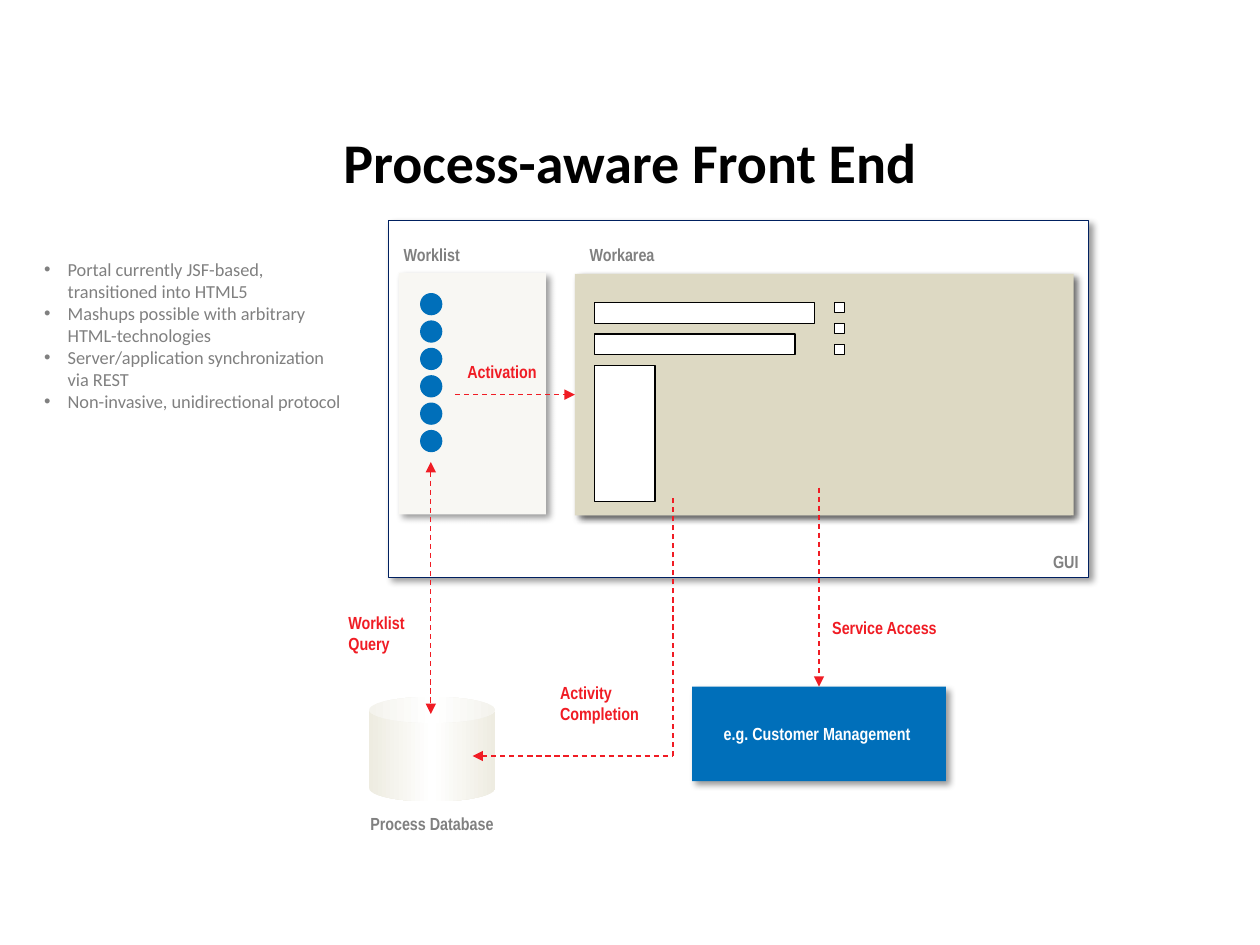
from copy import deepcopy
from typing import NamedTuple, Optional

from lxml import etree
from pptx import Presentation
from pptx.dml.color import RGBColor
from pptx.enum.dml import MSO_LINE
from pptx.enum.shapes import MSO_CONNECTOR, MSO_SHAPE
from pptx.enum.text import MSO_ANCHOR, MSO_AUTO_SIZE, PP_ALIGN
from pptx.oxml.ns import qn
from pptx.util import Pt

RECT, OVAL, CAN = MSO_SHAPE.RECTANGLE, MSO_SHAPE.OVAL, MSO_SHAPE.CAN
STRAIGHT, DASH = MSO_CONNECTOR.STRAIGHT, MSO_LINE.DASH
MIDDLE, TOP = MSO_ANCHOR.MIDDLE, MSO_ANCHOR.TOP
LEFT, CENTER = PP_ALIGN.LEFT, PP_ALIGN.CENTER
FIT, FIXED = MSO_AUTO_SIZE.SHAPE_TO_FIT_TEXT, MSO_AUTO_SIZE.NONE

BLACK = RGBColor(0x00, 0x00, 0x00)
WHITE = RGBColor(0xFF, 0xFF, 0xFF)
GRAY = RGBColor(0x80, 0x80, 0x80)
RED = RGBColor(0xF0, 0x1C, 0x24)
BLUE = RGBColor(0x00, 0x6F, 0xBA)
NAVY = RGBColor(0x00, 0x20, 0x60)
PALE = RGBColor(0xF8, 0xF7, 0xF3)
CREAM = RGBColor(0xFC, 0xFB, 0xF9)
SAND = RGBColor(0xDD, 0xD9, 0xC3)
STONE = RGBColor(0xEE, 0xEC, 0xE1)

BODY, NARROW = "Calibri", "Arial Narrow"


class Box(NamedTuple):
    x: float
    y: float
    w: float
    h: float
    fill: RGBColor
    line: Optional[RGBColor] = None
    weight: float = 0.75
    shade: bool = False
    kind: int = RECT


class Label(NamedTuple):
    x: float
    y: float
    w: float
    h: float
    lines: list
    color: RGBColor


class Arrow(NamedTuple):
    x1: float
    y1: float
    x2: float
    y2: float
    head: bool = False
    tail: bool = False


def add_text(para, text: str, font: str, size: float, color: RGBColor, bold: bool) -> None:
    """Fill a paragraph, with a line break at each newline."""
    for i, part in enumerate(text.split("\n")):
        if i:
            para.add_line_break()
        run = para.add_run()
        run.text = part
        run.font.name, run.font.size = font, Pt(size)
        run.font.bold, run.font.color.rgb = bold, color


def get_para(frame, i: int):
    return frame.add_paragraph() if i else frame.paragraphs[0]


def place(shape, x: float, y: float, w: float, h: float) -> None:
    shape.left, shape.top, shape.width, shape.height = Pt(x), Pt(y), Pt(w), Pt(h)


def cast_shadow(shape) -> None:
    effects = shape._element.spPr.find(qn("a:effectLst"))
    outer = etree.SubElement(effects, qn("a:outerShdw"), blurRad=str(Pt(4)),
                             dist=str(Pt(3)), dir="2700000", algn="tl", rotWithShape="0")
    color = etree.SubElement(outer, qn("a:srgbClr"), val=str(BLACK))
    etree.SubElement(color, qn("a:alpha"), val="40000")


def draw_box(slide, box: Box):
    shape = slide.shapes.add_shape(box.kind, Pt(box.x), Pt(box.y), Pt(box.w), Pt(box.h))
    shape.shadow.inherit = False
    shape.fill.solid()
    shape.fill.fore_color.rgb = box.fill
    if box.line is None:
        shape.line.fill.background()
    else:
        shape.line.color.rgb = box.line
        shape.line.width = Pt(box.weight)
    if box.shade:
        cast_shadow(shape)
    return shape


def draw_label(slide, label: Label) -> None:
    shape = slide.shapes.add_textbox(Pt(label.x), Pt(label.y), Pt(label.w), Pt(label.h))
    frame = shape.text_frame
    frame.word_wrap, frame.auto_size = False, FIT
    for i, text in enumerate(label.lines):
        add_text(get_para(frame, i), text, NARROW, 10, label.color, True)


def draw_arrow(slide, arrow: Arrow):
    link = slide.shapes.add_connector(STRAIGHT, Pt(arrow.x1), Pt(arrow.y1),
                                      Pt(arrow.x2), Pt(arrow.y2))
    link.line.color.rgb, link.line.width = RED, Pt(0.75)
    link.line.dash_style = DASH
    props = link._element.spPr
    stroke = props.find(qn("a:ln"))
    for tag, wanted in (("a:headEnd", arrow.head), ("a:tailEnd", arrow.tail)):
        if wanted:
            etree.SubElement(stroke, qn(tag), type="triangle")
    etree.SubElement(props, qn("a:effectLst"))
    return link


def draw_store(slide) -> None:
    """Draw the database can with its three-stop sheen."""
    store = draw_box(slide, Box(211, 398.2, 72, 59.8, STONE, kind=CAN))
    store.adjustments[0] = 0.25
    store.fill.gradient()
    store.fill.gradient_angle = 0
    stops = store._element.spPr.find(qn("a:gradFill")).find(qn("a:gsLst"))
    stops.insert(1, deepcopy(stops[0]))
    for stop, spot, color in zip(store.fill.gradient_stops, (0, 0.5, 1), (STONE, WHITE, STONE)):
        stop.position, stop.color.rgb = spot, color


def write_title(slide) -> None:
    title = slide.shapes.title
    place(title, 36, 67, 648, 50)
    frame = title.text_frame
    frame.vertical_anchor, frame.auto_size = MIDDLE, FIXED
    para = frame.paragraphs[0]
    para.alignment = CENTER
    add_text(para, "Process-aware Front End", BODY, 32, BLACK, True)


def write_list(slide, items: list) -> None:
    body = slide.placeholders[1]
    place(body, 18, 144, 187.2, 96.5)
    frame = body.text_frame
    frame.word_wrap, frame.auto_size, frame.vertical_anchor = False, FIT, TOP
    for i, item in enumerate(items):
        para = get_para(frame, i)
        para.alignment, para.space_before = LEFT, Pt(0)
        props = para._p.get_or_add_pPr()
        props.set("marL", str(Pt(13.5)))
        props.set("indent", str(-Pt(13.5)))
        etree.SubElement(props, qn("a:buFont"), typeface="Arial")
        etree.SubElement(props, qn("a:buChar"), char="•")
        add_text(para, item, BODY, 10.5, GRAY, False)


def main() -> None:
    deck = Presentation()
    deck.slide_width, deck.slide_height = Pt(720), Pt(540)
    slide = deck.slides.add_slide(deck.slide_layouts[1])
    write_title(slide)
    write_list(slide, [
        "Portal currently JSF-based,\ntransitioned into HTML5",
        "Mashups possible with arbitrary\nHTML-technologies",
        "Server/application synchronization \nvia REST",
        "Non-invasive, unidirectional protocol",
    ])

    draw_box(slide, Box(221.75, 126, 400, 204, WHITE, NAVY, 0.5, True))
    draw_box(slide, Box(228, 156, 84, 138, PALE, shade=True))
    draw_box(slide, Box(330, 156.5, 282, 138, CREAM, shade=True))
    area = draw_box(slide, Box(328.5, 156.5, 285, 138, SAND, shade=True))
    for y, w, h in ((172.8, 125.5, 12), (190.8, 114.5, 12), (208.8, 34.5, 78)):
        draw_box(slide, Box(339.8, y, w, h, WHITE, BLACK))
    for i in range(3):
        draw_box(slide, Box(476.8, 172.8 + 12 * i, 5.8, 5.8, WHITE, BLACK))

    task = draw_box(slide, Box(395.5, 392.4, 145, 54, BLUE, shade=True))
    frame = task.text_frame
    frame.word_wrap, frame.vertical_anchor = False, MIDDLE
    frame.paragraphs[0].alignment = CENTER
    add_text(frame.paragraphs[0], "e.g. Customer Management ", NARROW, 10, WHITE, True)

    draw_store(slide)
    for i in range(6):
        draw_box(slide, Box(240.4, 167.8 + 15.65 * i, 12, 12, BLUE, BLUE, kind=OVAL))

    start = draw_arrow(slide, Arrow(260, 225.5, 328.5, 225.5, tail=True))
    start.end_connect(area, 1)
    call = draw_arrow(slide, Arrow(468, 278.6, 468, 392.4, tail=True))
    call.end_connect(task, 0)
    for arrow in (
        Arrow(246.2, 264, 246.2, 408, head=True, tail=True),
        Arrow(384.5, 432, 384.5, 284.4),
        Arrow(270, 432, 384.5, 432, head=True),
    ):
        draw_arrow(slide, arrow)

    for label in (
        Label(594.7, 311.2, 28.8, 19.4, ["GUI"], GRAY),
        Label(223.6, 136, 46.8, 19.4, ["Worklist"], GRAY),
        Label(329.8, 136, 51.8, 19.4, ["Workarea"], GRAY),
        Label(260, 202.6, 54, 19.4, ["Activation"], RED),
        Label(468.5, 349.2, 74.2, 19.4, ["Service Access"], RED),
        Label(204.5, 461, 85, 19.4, ["Process Database"], GRAY),
        Label(192, 346.3, 46.8, 31, ["Worklist", "Query"], RED),
        Label(313, 386.4, 64, 31, ["Activity \nCompletion"], RED),
    ):
        draw_label(slide, label)
    deck.save("out.pptx")


if __name__ == "__main__":
    main()
